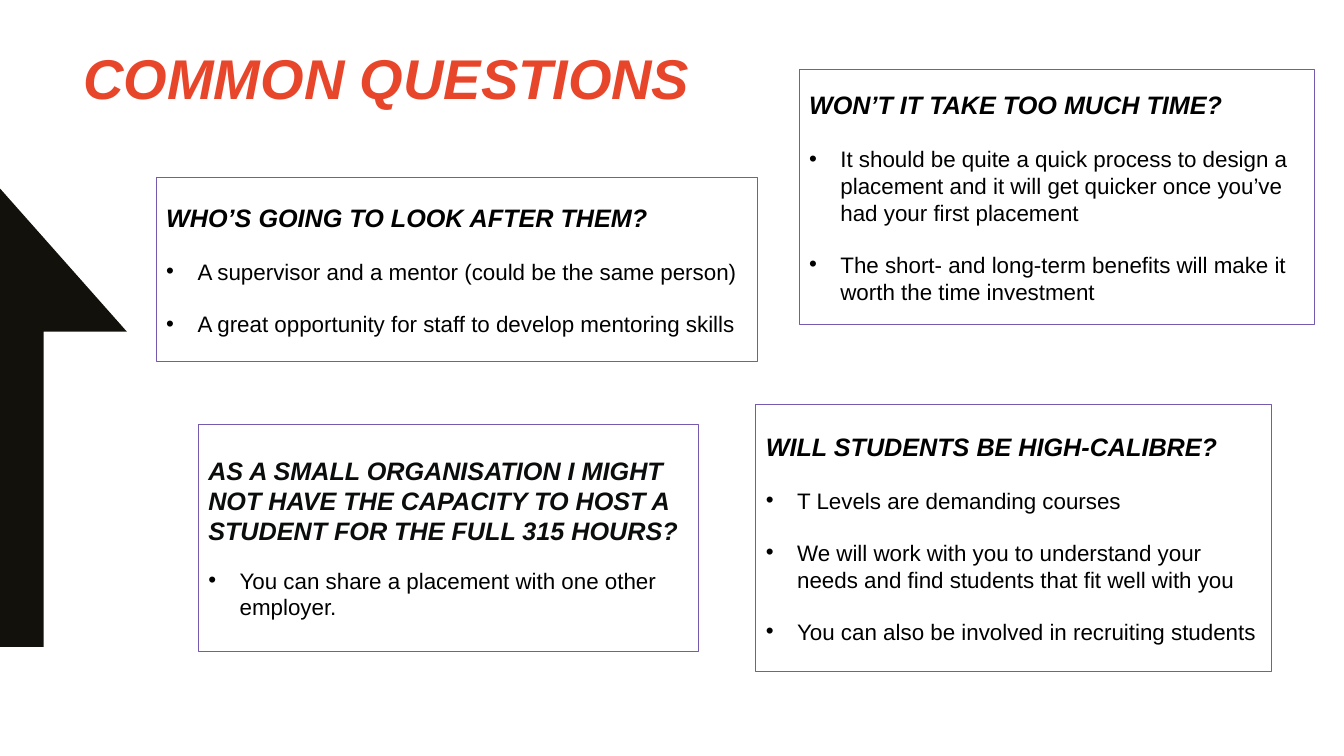
from dataclasses import dataclass

from lxml import etree
from pptx import Presentation
from pptx.dml.color import RGBColor
from pptx.enum.shapes import MSO_SHAPE
from pptx.enum.text import MSO_ANCHOR, MSO_AUTO_SIZE, PP_ALIGN
from pptx.oxml.ns import qn
from pptx.slide import Slide
from pptx.util import Cm, Pt

RECTANGLE = MSO_SHAPE.RECTANGLE
TOP, MIDDLE = MSO_ANCHOR.TOP, MSO_ANCHOR.MIDDLE
LEFT = PP_ALIGN.LEFT
NO_AUTOFIT = MSO_AUTO_SIZE.NONE
TITLE_ONLY = 5


@dataclass(frozen=True)
class Theme:
    font: str = "Arial"
    title_size: int = 40
    question_size: int = 18
    answer_size: int = 16
    title: str = "E8462B"
    text: str = "000000"
    soft_text: str = "0B0C0C"
    border: str = "765AB0"
    arrow: str = "12110C"


@dataclass(frozen=True)
class QuestionCard:
    left: float
    top: float
    width: float
    height: float
    question: str
    answers: tuple[str, ...]
    question_color: str
    gap: int = 18  # points between paragraphs


THEME = Theme()
BULLET_INDENT = Cm(0.79)

# Outline of the arrow cut off by the left edge, in cm
ARROW = ((0, 4.75), (3.2, 8.36), (1.1, 8.36), (1.1, 16.3), (0, 16.3))

CARDS = (
    QuestionCard(3.94, 4.47, 15.14, 4.65, "WHO’S GOING TO LOOK AFTER THEM?", (
        "A supervisor and a mentor (could be the same person)",
        "A great opportunity for staff to develop mentoring skills",
    ), THEME.text),
    QuestionCard(20.14, 1.75, 13, 6.43, "WON’T IT TAKE TOO MUCH TIME?", (
        "It should be quite a quick process to design a placement and it will "
        "get quicker once you’ve had your first placement",
        "The short- and long-term benefits will make it worth the time investment",
    ), THEME.text),
    QuestionCard(19.05, 10.19, 13, 6.73, "WILL STUDENTS BE HIGH-CALIBRE?", (
        "T Levels are demanding courses",
        "We will work with you to understand your needs and find students "
        "that fit well with you",
        "You can also be involved in recruiting students",
    ), THEME.text),
    QuestionCard(5, 10.69, 12.6, 5.72,
                 "AS A SMALL ORGANISATION I MIGHT NOT HAVE THE CAPACITY TO HOST A "
                 "STUDENT FOR THE FULL 315 HOURS?",
                 ("You can share a placement with one other employer.",),
                 THEME.soft_text, gap=15),
)


def add_run(paragraph, text: str, size: int, color: str, strong: bool) -> None:
    run = paragraph.add_run()
    run.text = text
    run.font.name = THEME.font
    run.font.size = Pt(size)
    run.font.bold = run.font.italic = strong
    run.font.color.rgb = RGBColor.from_string(color)


def add_bullet(paragraph) -> None:
    properties = paragraph._p.get_or_add_pPr()
    properties.set("marL", str(BULLET_INDENT))
    properties.set("indent", str(-BULLET_INDENT))
    etree.SubElement(properties, qn("a:buFont")).set("typeface", THEME.font)
    etree.SubElement(properties, qn("a:buChar")).set("char", "•")


def draw_title(slide: Slide) -> None:
    title = slide.shapes.title
    title.left, title.top, title.width, title.height = Cm(1.85), Cm(0.97), Cm(30), Cm(3.6)
    frame = title.text_frame
    frame.vertical_anchor = TOP
    frame.auto_size = NO_AUTOFIT
    paragraph = frame.paragraphs[0]
    paragraph.alignment = LEFT
    add_run(paragraph, "COMMON QUESTIONS", THEME.title_size, THEME.title, True)


def draw_arrow(slide: Slide) -> None:
    points = [(Cm(x), Cm(y)) for x, y in ARROW]
    builder = slide.shapes.build_freeform(*points[0])
    builder.add_line_segments(points[1:], close=True)
    arrow = builder.convert_to_shape()
    arrow.shadow.inherit = False
    arrow.fill.solid()
    arrow.fill.fore_color.rgb = RGBColor.from_string(THEME.arrow)
    arrow.line.fill.background()


def draw_card(slide: Slide, card: QuestionCard) -> None:
    box = slide.shapes.add_shape(RECTANGLE, Cm(card.left), Cm(card.top),
                                 Cm(card.width), Cm(card.height))
    box.shadow.inherit = False
    box.fill.background()
    box.line.color.rgb = RGBColor.from_string(THEME.border)
    box.line.width = Pt(0.75)

    frame = box.text_frame
    frame.word_wrap = True
    frame.vertical_anchor = MIDDLE
    question = frame.paragraphs[0]
    question.alignment = LEFT
    add_run(question, card.question, THEME.question_size, card.question_color, True)
    for text in card.answers:
        answer = frame.add_paragraph()
        answer.alignment = LEFT
        answer.space_before = Pt(card.gap)
        add_bullet(answer)
        add_run(answer, text, THEME.answer_size, THEME.text, False)


def main() -> None:
    presentation = Presentation()
    presentation.slide_width, presentation.slide_height = Cm(33.87), Cm(19.05)
    slide = presentation.slides.add_slide(presentation.slide_layouts[TITLE_ONLY])
    draw_arrow(slide)
    for card in CARDS:
        draw_card(slide, card)
    draw_title(slide)
    presentation.save("out.pptx")


if __name__ == "__main__":
    main()
